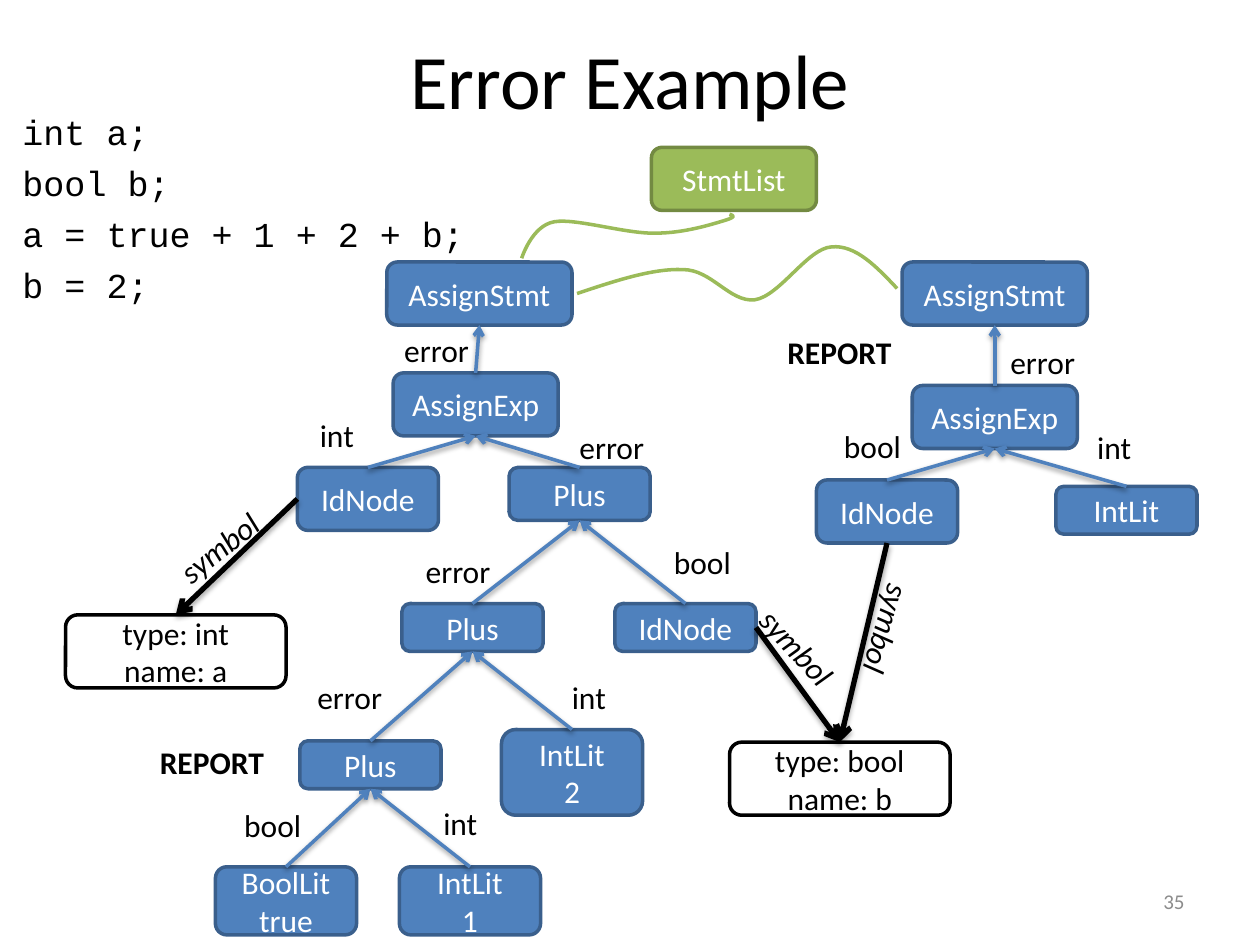
from dataclasses import dataclass

from lxml import etree
from pptx import Presentation
from pptx import util as u
from pptx.dml.color import RGBColor
from pptx.enum import shapes, text
from pptx.oxml.ns import qn

PX = 9144
BLACK = RGBColor(0x00, 0x00, 0x00)
WHITE = RGBColor(0xFF, 0xFF, 0xFF)
GRAY = RGBColor(0x8C, 0x8C, 0x8C)
BLUE = RGBColor(0x4F, 0x81, 0xBD)
DARK_BLUE = RGBColor(0x3A, 0x5F, 0x8C)
GREEN = RGBColor(0x9B, 0xBB, 0x59)
DARK_GREEN = RGBColor(0x73, 0x8A, 0x42)
TOP, LEFT, BOTTOM, RIGHT = range(4)
LABEL_WIDTHS = {"int": 47, "bool": 66, "error": 72, "symbol": 92, "REPORT": 104}


@dataclass(frozen=True)
class Palette:
    fill: RGBColor
    outline: RGBColor
    ink: RGBColor


TREE = Palette(BLUE, DARK_BLUE, WHITE)
LIST = Palette(GREEN, DARK_GREEN, WHITE)
SYMBOL = Palette(WHITE, BLACK, BLACK)


@dataclass(frozen=True)
class Node:
    key: str
    wording: str
    left: int
    top: int
    width: int = 112
    height: int = 38
    palette: Palette = TREE


@dataclass(frozen=True)
class Edge:
    child: str
    parent: str
    start: int = TOP
    end: int = BOTTOM
    color: RGBColor = BLUE
    weight: int = 2
    shadow_alpha: int = 38
    shadow_distance: float = 1.6


@dataclass(frozen=True)
class Label:
    wording: str
    left: int
    top: int
    rotation: float = 0


def symbol_edge(child: str, symbol: str, start: int) -> Edge:
    return Edge(child, symbol, start, TOP, BLACK, 3, 35, 1.8)


NODES = [
    Node("bool_lit", "BoolLit\ntrue", 171, 688, height=54),
    Node("int_lit_1", "IntLit\n1", 317, 688, height=54),
    Node("inner_plus", "Plus", 238, 588),
    Node("int_lit_2", "IntLit\n2", 398, 579, height=68),
    Node("middle_plus", "Plus", 319, 479),
    Node("outer_plus", "Plus", 404, 371, height=42),
    Node("id_b_read", "IdNode", 488, 479),
    Node("symbol_b", "type: bool\nname: b", 579, 589, 175, 58, SYMBOL),
    Node("exp_a", "AssignExp", 312, 296, 131, 50),
    Node("id_a", "IdNode", 236, 371, height=50),
    Node("symbol_a", "type: int\nname: a", 52, 488, 175, 58, SYMBOL),
    Node("stmt_a", "AssignStmt", 307, 208, 147, 50),
    Node("stmt_b", "AssignStmt", 716, 208, 147, 50),
    Node("exp_b", "AssignExp", 724, 306, 131, 50),
    Node("id_b", "IdNode", 648, 381, height=50),
    Node("int_lit_b", "IntLit", 838, 386),
    Node("stmt_list", "StmtList", 517, 117, 131, 50, LIST),
]

EDGES = [
    Edge("bool_lit", "inner_plus"),
    Edge("int_lit_1", "inner_plus"),
    Edge("inner_plus", "middle_plus"),
    Edge("int_lit_2", "middle_plus"),
    Edge("middle_plus", "outer_plus"),
    Edge("id_b_read", "outer_plus"),
    Edge("outer_plus", "exp_a"),
    Edge("id_a", "exp_a"),
    Edge("exp_a", "stmt_a"),
    Edge("id_b", "exp_b"),
    Edge("int_lit_b", "exp_b"),
    Edge("exp_b", "stmt_b"),
    symbol_edge("id_b_read", "symbol_b", RIGHT),
    symbol_edge("id_a", "symbol_a", LEFT),
    symbol_edge("id_b", "symbol_b", BOTTOM),
]

LABELS = [
    Label("symbol", 587, 494, 47.5),
    Label("symbol", 128, 414, 321.4),
    Label("symbol", 658, 480, 106.8),
    Label("bool", 184, 635),
    Label("int", 342, 633),
    Label("error", 242, 533),
    Label("int", 444, 533),
    Label("REPORT", 117, 585),
    Label("error", 328, 433),
    Label("bool", 525, 426),
    Label("error", 450, 335),
    Label("int", 244, 325),
    Label("error", 311, 258),
    Label("bool", 660, 334),
    Label("int", 861, 335),
    Label("error", 792, 267),
    Label("REPORT", 615, 259),
]

LIST_LINKS = [
    [(579, 170), (582, 171), (585, 172), (575, 175), (565, 178), (543, 185),
     (521, 185), (498, 186), (457, 173), (440, 176), (422, 179), (414, 205), (414, 205)],
    [(458, 233), (488, 223), (518, 213), (542, 214), (565, 214), (579, 240),
     (599, 238), (619, 235), (641, 197), (660, 196), (679, 194), (696, 212), (712, 229)],
]


def write(shape, wording: str, *, size=18, font="Calibri", color=BLACK, bold=False,
          italic=False, align=text.PP_ALIGN.LEFT, anchor=text.MSO_ANCHOR.TOP,
          wrap=True, space_before=0) -> None:
    frame = shape.text_frame
    frame.word_wrap = wrap
    frame.vertical_anchor = anchor
    frame.text = wording
    for paragraph in frame.paragraphs:
        paragraph.alignment = align
        paragraph.space_before = u.Pt(space_before)
        for run in paragraph.runs:
            run.font.size = u.Pt(size)
            run.font.name = font
            run.font.color.rgb = color
            run.font.bold = bold
            run.font.italic = italic


def add_box(slide, left: int, top: int, width: int, height: int):
    return slide.shapes.add_textbox(left * PX, top * PX, width * PX, height * PX)


def add_node(slide, node: Node):
    box = slide.shapes.add_shape(
        shapes.MSO_SHAPE.ROUNDED_RECTANGLE,
        node.left * PX, node.top * PX, node.width * PX, node.height * PX)
    box.shadow.inherit = False
    box.fill.solid()
    box.fill.fore_color.rgb = node.palette.fill
    box.line.color.rgb = node.palette.outline
    box.line.width = u.Pt(2)
    write(box, node.wording, color=node.palette.ink,
          align=text.PP_ALIGN.CENTER, anchor=text.MSO_ANCHOR.MIDDLE)
    return box


def add_edge(slide, edge: Edge, boxes: dict) -> None:
    arrow = slide.shapes.add_connector(shapes.MSO_CONNECTOR.STRAIGHT, 0, 0, 0, 0)
    arrow.begin_connect(boxes[edge.child], edge.start)
    arrow.end_connect(boxes[edge.parent], edge.end)
    arrow.line.color.rgb = edge.color
    arrow.line.width = u.Pt(edge.weight)
    etree.SubElement(arrow.line._get_or_add_ln(), qn("a:tailEnd"), type="arrow")
    effects = etree.SubElement(arrow._element.spPr, qn("a:effectLst"))
    shadow = etree.SubElement(
        effects, qn("a:outerShdw"), blurRad=str(u.Pt(3.1)),
        dist=str(u.Pt(edge.shadow_distance)), dir="5400000", rotWithShape="0")
    shade = etree.SubElement(shadow, qn("a:srgbClr"), val=str(BLACK))
    etree.SubElement(shade, qn("a:alpha"), val=str(edge.shadow_alpha * 1000))


def add_label(slide, label: Label) -> None:
    box = add_box(slide, label.left, label.top, LABEL_WIDTHS[label.wording], 40)
    write(box, label.wording, wrap=False, bold=label.wording == "REPORT",
          italic=label.wording == "symbol")
    box.text_frame.auto_size = text.MSO_AUTO_SIZE.SHAPE_TO_FIT_TEXT
    box.rotation = label.rotation


def add_curve(slide, points: list[tuple[int, int]]) -> None:
    builder = slide.shapes.build_freeform(*points[0], scale=PX)
    builder.add_line_segments(points[1:], close=False)
    curve = builder.convert_to_shape()
    curve.shadow.inherit = False
    curve.fill.background()
    curve.line.color.rgb = GREEN
    curve.line.width = u.Pt(2)
    segments = list(curve._element.iter(qn("a:lnTo")))
    outline = segments[0].getparent()
    for first in range(0, len(segments), 3):
        bezier = etree.SubElement(outline, qn("a:cubicBezTo"))
        for segment in segments[first:first + 3]:
            bezier.append(segment[0])
            outline.remove(segment)


def main() -> None:
    deck = Presentation()
    deck.slide_width, deck.slide_height = 1000 * PX, 750 * PX
    slide = deck.slides.add_slide(deck.slide_layouts[6])
    write(add_box(slide, 50, 0, 900, 125), "Error Example", size=44,
          align=text.PP_ALIGN.CENTER, anchor=text.MSO_ANCHOR.MIDDLE)
    write(add_box(slide, 8, 83, 458, 575),
          "int a;\nbool b;\na = true + 1 + 2 + b;\nb = 2;",
          size=20, font="Courier New", space_before=5)
    write(add_box(slide, 717, 695, 233, 40), "35", size=12, color=GRAY,
          align=text.PP_ALIGN.RIGHT, anchor=text.MSO_ANCHOR.MIDDLE)
    boxes = {node.key: add_node(slide, node) for node in NODES}
    for edge in EDGES:
        add_edge(slide, edge, boxes)
    for points in LIST_LINKS:
        add_curve(slide, points)
    for label in LABELS:
        add_label(slide, label)
    deck.save("out.pptx")


if __name__ == "__main__":
    main()
